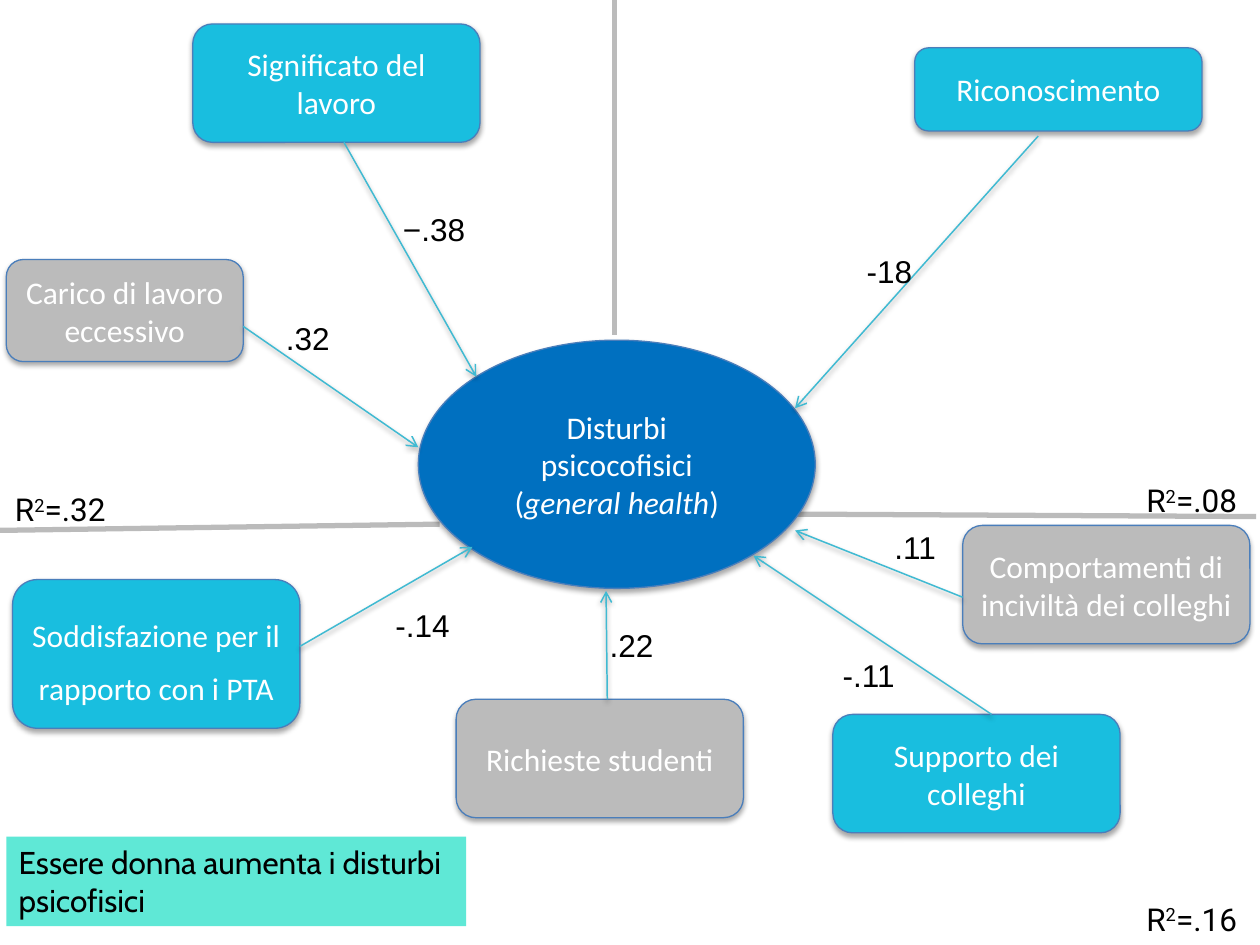
from lxml.etree import SubElement
from pptx import Presentation
from pptx.dml.color import RGBColor
from pptx.enum.shapes import MSO_CONNECTOR, MSO_SHAPE
from pptx.enum.text import MSO_ANCHOR, PP_ALIGN
from pptx.oxml.ns import qn
from pptx.util import Inches, Pt

WIDTH, HEIGHT = 10, 7.5
CYAN, GREY, BLUE, MINT = "19BEDF", "BBBBBB", "0070C0", "5FE8D6"
OUTLINE, ARROW, WHITE, BLACK = "4A7EBB", "40BAD2", "FFFFFF", "000000"
BOX_WIDTH, BOX_HEIGHT, LABEL_HEIGHT = 2.28, 0.94, 0.4

DIVIDERS = [
    ((4.88, -0.02), (4.88, 2.66)),
    ((9.97, 4.1), (6.26, 4.08)),
    ((3.49, 4.16), (-0.04, 4.21)),
]
CENTRE = (3.32, 2.7, 3.15, 1.97)
CENTRE_RUNS = [("Disturbi psicocofisici (", {}), ("general health", {"italic": True}), (")", {})]

FACTORS = [
    {"text": "Significato del lavoro", "at": (1.53, 0.19), "fill": CYAN,
     "arrow": ((2.73, 1.13), (3.78, 2.99)), "weight": "−.38", "weight_at": (3.1, 1.62)},
    {"text": "Richieste studenti", "at": (3.62, 5.55), "fill": GREY,
     "arrow": ((4.82, 5.55), (4.81, 4.69)), "weight": ".22", "weight_at": (4.74, 4.92)},
    {"text": "Riconoscimento", "at": (7.26, 0.38), "size": (BOX_WIDTH, 0.66), "fill": CYAN,
     "arrow": ((8.24, 1.08), (6.31, 3.24)), "weight": "-18", "weight_at": (6.78, 1.95)},
    {"text": "Carico di lavoro eccessivo", "at": (0.05, 2.06), "size": (1.88, 0.81), "fill": GREY,
     "arrow": ((1.93, 2.59), (3.32, 3.55)), "weight": ".32", "weight_at": (2.17, 2.48)},
    {"text": "Soddisfazione per il rapporto con i PTA", "at": (0.1, 4.6), "size": (BOX_WIDTH, 1.18),
     "fill": CYAN, "spacing": 1.4,
     "arrow": ((2.38, 5.13), (3.75, 4.34)), "weight": "-.14", "weight_at": (3.04, 4.76)},
    {"text": "Supporto dei colleghi", "at": (6.61, 5.67), "fill": CYAN,
     "arrow": ((7.87, 5.67), (5.98, 4.41)), "weight": "-.11", "weight_at": (6.59, 5.16)},
    {"text": "Comportamenti di inciviltà dei colleghi", "at": (7.64, 4.17), "fill": GREY,
     "arrow": ((7.64, 4.74), (6.31, 4.21)), "weight": ".11", "weight_at": (7, 4.14)},
]
R_SQUARED = [("=.32", (0.02, 3.84)), ("=.08", (9, 3.77)), ("=.16", (9, 7.09))]
BANNER = ("Essere donna aumenta i disturbi psicofisici", (0.05, 6.64, 3.65, 0.71))


def colour(value):
    return RGBColor.from_string(value)


def inches(values):
    return [Inches(value) for value in values]


def write(shape, runs, font="Calibri", ink=WHITE, align=PP_ALIGN.CENTER,
          anchor=MSO_ANCHOR.MIDDLE, wrap=True, spacing=None):
    frame = shape.text_frame
    frame.word_wrap = wrap
    frame.vertical_anchor = anchor
    paragraph = frame.paragraphs[0]
    paragraph.alignment = align
    paragraph.line_spacing = spacing
    for text, style in [(runs, {})] if isinstance(runs, str) else runs:
        run = paragraph.add_run()
        run.text = text
        run.font.name = font
        run.font.size = Pt(18)
        run.font.color.rgb = colour(ink)
        if style.get("italic"):
            run.font.italic = True
        if style.get("superscript"):
            run.font._element.set("baseline", "30000")


def set_shadow(properties, opacity=None, distance=1.8):
    for old in properties.findall(qn("a:effectLst")):
        properties.remove(old)
    effects = SubElement(properties, qn("a:effectLst"))
    if opacity:
        shadow = SubElement(effects, qn("a:outerShdw"), blurRad=str(Pt(3.1)),
                            dist=str(Pt(distance)), dir="5400000", rotWithShape="0")
        tone = SubElement(shadow, qn("a:srgbClr"), val=BLACK)
        SubElement(tone, qn("a:alpha"), val=str(opacity * 1000))


def add_node(slide, kind, box, fill, outlined=True):
    shape = slide.shapes.add_shape(kind, *inches(box))
    shape.fill.solid()
    shape.fill.fore_color.rgb = colour(fill)
    shape.shadow.inherit = False
    if outlined:
        shape.line.color.rgb = colour(OUTLINE)
        shape.line.width = Pt(0.75)
        set_shadow(shape._element.spPr, 35)
    else:
        shape.line.fill.background()
    return shape


def add_line(slide, start, end, ink, width, arrow=False):
    line = slide.shapes.add_connector(MSO_CONNECTOR.STRAIGHT, *inches(start + end))
    line.line.color.rgb = colour(ink)
    line.line.width = Pt(width)
    properties = line._element.spPr
    if arrow:
        SubElement(properties.find(qn("a:ln")), qn("a:tailEnd"), type="arrow")
    set_shadow(properties, 38 if arrow else None, 1.6)


def add_label(slide, runs, at, width, font, wrap):
    box = slide.shapes.add_textbox(*inches(at + (width, LABEL_HEIGHT)))
    write(box, runs, font=font, ink=BLACK, align=PP_ALIGN.LEFT, anchor=MSO_ANCHOR.TOP, wrap=wrap)


def main():
    presentation = Presentation()
    presentation.slide_width, presentation.slide_height = inches((WIDTH, HEIGHT))
    slide = presentation.slides.add_slide(presentation.slide_layouts[6])

    for start, end in DIVIDERS:
        add_line(slide, start, end, GREY, 3)

    write(add_node(slide, MSO_SHAPE.OVAL, CENTRE, BLUE), CENTRE_RUNS)

    for factor in FACTORS:
        box = factor["at"] + factor.get("size", (BOX_WIDTH, BOX_HEIGHT))
        node = add_node(slide, MSO_SHAPE.ROUNDED_RECTANGLE, box, factor["fill"])
        write(node, factor["text"], spacing=factor.get("spacing"))
        add_line(slide, *factor["arrow"], ARROW, 0.85, arrow=True)
        width = 0.3 + 0.1 * len(factor["weight"])
        add_label(slide, factor["weight"], factor["weight_at"], width, "Arial", False)

    for value, at in R_SQUARED:
        runs = [("R", {}), ("2", {"superscript": True}), (value, {})]
        add_label(slide, runs, at, 0.97, "Roboto", True)

    text, box = BANNER
    banner = add_node(slide, MSO_SHAPE.RECTANGLE, box, MINT, outlined=False)
    write(banner, text, font="Cabin", ink=BLACK, align=PP_ALIGN.LEFT, anchor=MSO_ANCHOR.TOP)
    presentation.save("out.pptx")


if __name__ == "__main__":
    main()
